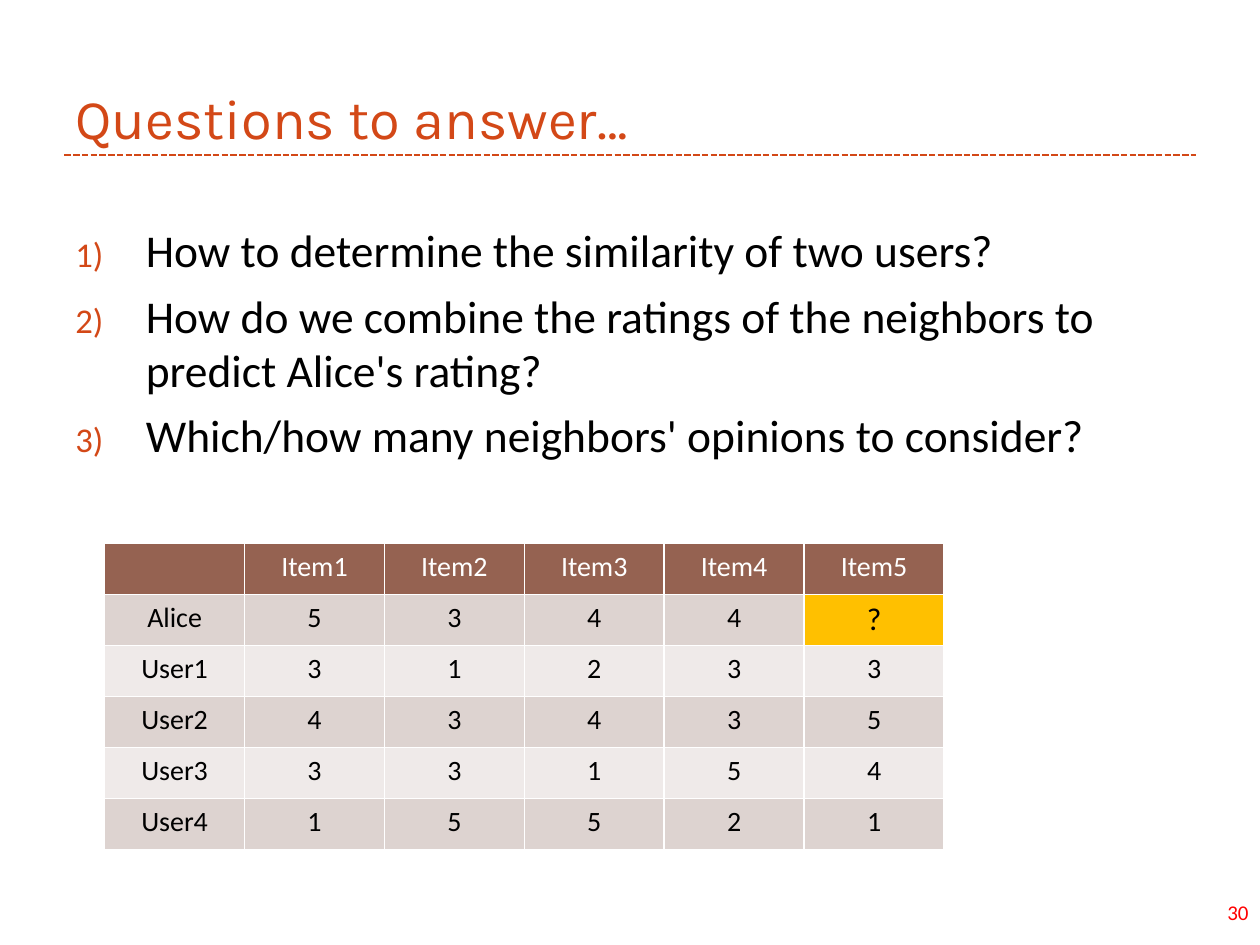
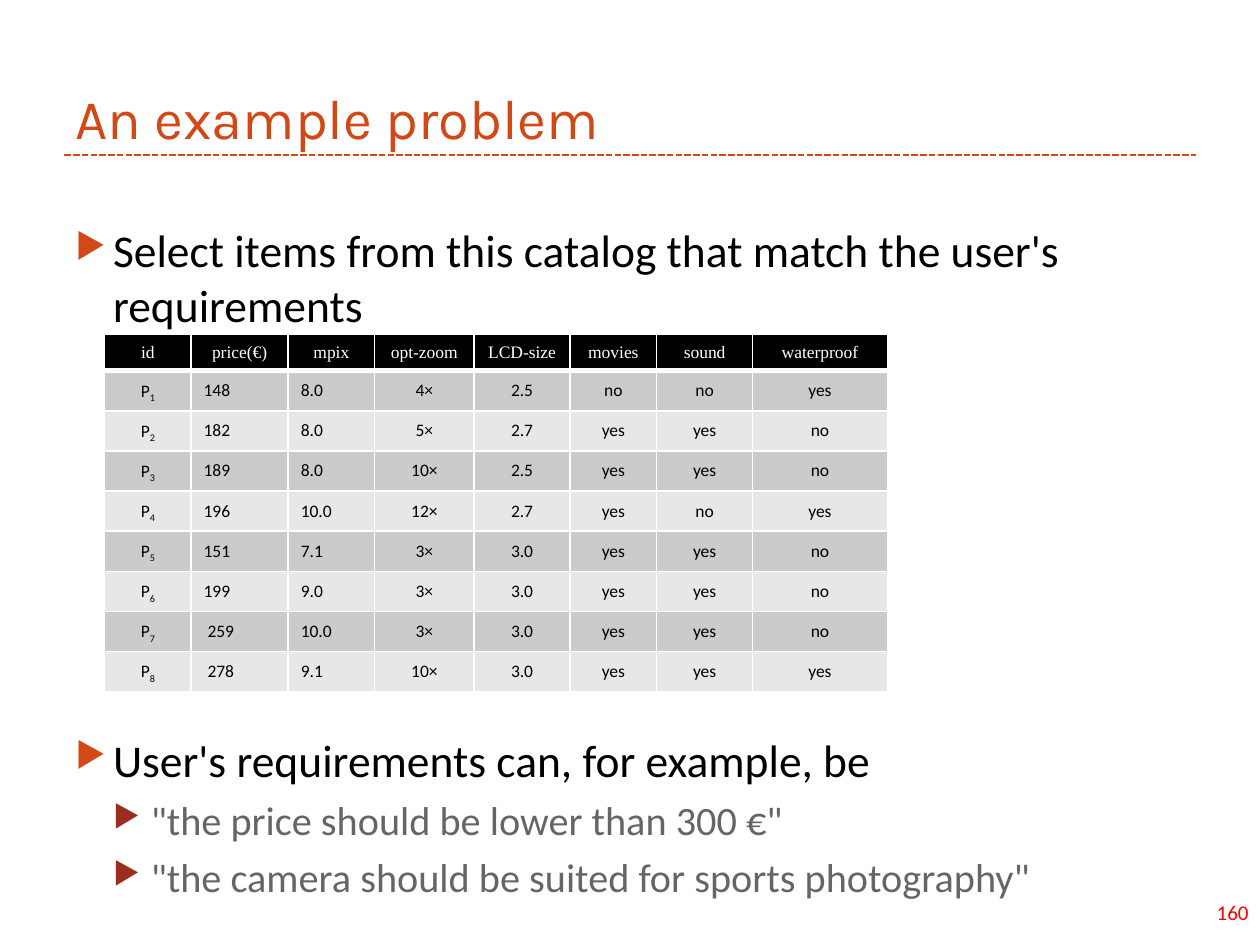
from lxml import etree
from pptx import Presentation
from pptx.dml.color import RGBColor
from pptx.enum.dml import MSO_LINE
from pptx.enum.shapes import MSO_CONNECTOR
from pptx.enum.text import MSO_ANCHOR, PP_ALIGN
from pptx.oxml.ns import qn
from pptx.util import Cm, Pt

LEFT, CENTER, RIGHT = PP_ALIGN.LEFT, PP_ALIGN.CENTER, PP_ALIGN.RIGHT
TOP, BOTTOM = MSO_ANCHOR.TOP, MSO_ANCHOR.BOTTOM
STRAIGHT = MSO_CONNECTOR.STRAIGHT
DASH = MSO_LINE.SQUARE_DOT

ORANGE, DARK_RED, RED, AMBER = "D34817", "9B2D1F", "FF0000", "FFC000"
BLACK, WHITE, GREY = "000000", "FFFFFF", "696464"
MARGIN, CONTENT_WIDTH = 1.27, 22.86
TABLE_LEFT = 2.11


def rgb(value):
    return RGBColor.from_string(value)


def write(paragraph, text, *, size, color=BLACK, font="Calibri", align=LEFT,
          before=None, line_spacing=None, subscript=False):
    """Append a run to the paragraph and format both."""
    paragraph.alignment = align
    if before is not None:
        paragraph.space_before = Pt(before)
    if line_spacing:
        paragraph.line_spacing = line_spacing
    run = paragraph.add_run()
    run.text = text
    run.font.size = Pt(size)
    run.font.name = font
    run.font.color.rgb = rgb(color)
    if subscript:
        run._r.get_or_add_rPr().set("baseline", "-25000")


def add_bullet(paragraph, color, left, hanging, numbered):
    """Give the paragraph a coloured marker and a hanging indent in cm."""
    properties = paragraph._p.get_or_add_pPr()
    properties.set("marL", str(Cm(left)))
    properties.set("indent", str(-Cm(hanging)))
    bullet_color = etree.SubElement(properties, qn("a:buClr"))
    etree.SubElement(bullet_color, qn("a:srgbClr"), val=color)
    etree.SubElement(properties, qn("a:buSzPct"), val="76000")
    if numbered:
        etree.SubElement(properties, qn("a:buAutoNum"), type="arabicParenR")
    else:
        etree.SubElement(properties, qn("a:buChar"), char="▶")


def set_borders(cell, top, bottom):
    """Draw white cell borders; top and bottom are widths in points."""
    properties = cell._tc.get_or_add_tcPr()
    sides = {"a:lnL": 1, "a:lnR": 1, "a:lnT": top, "a:lnB": bottom}
    for position, (side, width) in enumerate(sides.items()):
        border = etree.Element(qn(side), w=str(Pt(width)))
        fill = etree.SubElement(border, qn("a:solidFill"))
        etree.SubElement(fill, qn("a:srgbClr"), val=WHITE)
        properties.insert(position, border)


class Deck:
    def __init__(self):
        self.presentation = Presentation()
        self.presentation.slide_width = Cm(25.4)
        self.presentation.slide_height = Cm(19.05)
        self.slide = None

    def add_slide(self, title, number):
        layout = self.presentation.slide_layouts[6]
        self.slide = self.presentation.slides.add_slide(layout)
        self.rule()
        write(self.text_box(22.17, 18.01, 3.25, 0.76).paragraphs[0],
              number, size=12, color=RED, align=RIGHT)
        heading = self.text_box(MARGIN, 0.43, CONTENT_WIDTH, 2.74, BOTTOM)
        write(heading.paragraphs[0], title, size=32, color=ORANGE, font="Karla")

    def rule(self):
        rule = self.slide.shapes.add_connector(
            STRAIGHT, Cm(1.3), Cm(3.12), Cm(24.1), Cm(3.12))
        rule.line.color.rgb = rgb(ORANGE)
        rule.line.width = Pt(1.25)
        rule.line.dash_style = DASH
        etree.SubElement(rule._element.spPr, qn("a:effectLst"))

    def text_box(self, left, top, width, height, anchor=TOP):
        box = self.slide.shapes.add_textbox(
            Cm(left), Cm(top), Cm(width), Cm(height))
        frame = box.text_frame
        frame.word_wrap = True
        frame.vertical_anchor = anchor
        return frame

    def bullets(self, items, hanging, numbered=False):
        """Fill the body with items of (text, level, space before)."""
        frame = self.text_box(MARGIN, 4.36, CONTENT_WIDTH, 13.5)
        for index, (text, level, before) in enumerate(items):
            paragraph = frame.add_paragraph() if index else frame.paragraphs[0]
            marker = DARK_RED if level else ORANGE
            add_bullet(paragraph, marker, hanging * (level + 1), hanging, numbered)
            write(paragraph, text, size=23 if level else 26,
                  color=GREY if level else BLACK, before=before)

    def table(self, rows, top, widths, heights, fills, size, *, header_rule=1,
              header_font="Calibri", line_spacing=None, left_columns=(),
              subscript_column=None):
        """Add a banded table; fills are header, odd and even row colours."""
        header_fill, *bands = fills
        frame = self.slide.shapes.add_table(
            len(rows), len(widths), Cm(TABLE_LEFT), Cm(top),
            Cm(sum(widths)), Cm(sum(heights)))
        table = frame.table
        table.first_row = table.horz_banding = False
        for column, width in zip(table.columns, widths):
            column.width = Cm(width)
        for r, (values, height) in enumerate(zip(rows, heights)):
            table.rows[r].height = Cm(height)
            for c, value in enumerate(values):
                cell = table.cell(r, c)
                unknown = value == "?"
                fill = bands[(r - 1) % 2] if r else header_fill
                cell.fill.solid()
                cell.fill.fore_color.rgb = rgb(AMBER if unknown else fill)
                set_borders(cell, top=header_rule if r == 1 else 1,
                            bottom=1 if r else header_rule)
                style = {
                    "size": 18 if unknown else size,
                    "color": BLACK if r else WHITE,
                    "font": "Calibri" if r else header_font,
                    "align": LEFT if r and c in left_columns else CENTER,
                    "line_spacing": line_spacing,
                }
                paragraph = cell.text_frame.paragraphs[0]
                if r and c == subscript_column:
                    write(paragraph, value[0], **style)
                    write(paragraph, value[1:], subscript=True, **style)
                elif value:
                    write(paragraph, value, **style)


def add_questions(deck):
    deck.add_slide("Questions to answer…", "30")
    deck.bullets([
        ("How to determine the similarity of two users?", 0, None),
        ("How do we combine the ratings of the neighbors to "
         "predict Alice's rating?", 0, 6),
        ("Which/how many neighbors' opinions to consider?", 0, 6),
    ], hanging=1.42, numbered=True)
    ratings = [
        ("", "Item1", "Item2", "Item3", "Item4", "Item5"),
        ("Alice", "5", "3", "4", "4", "?"),
        ("User1", "3", "1", "2", "3", "3"),
        ("User2", "4", "3", "4", "3", "5"),
        ("User3", "3", "3", "1", "5", "4"),
        ("User4", "1", "5", "5", "2", "1"),
    ]
    deck.table(ratings, 10.95, [2.82] * 6, [1.03] * 6,
               ("956251", "DDD3D0", "EFEAE9"), 16)


def add_example(deck):
    deck.add_slide("An example problem", "160")
    deck.bullets([
        ("Select items from this catalog that match the user's requirements",
         0, None),
        ("User's requirements can, for example, be", 0, 229),
        ('"the price should be lower than 300 €"', 1, 5),
        ('"the camera should be suited for sports photography"', 1, 5),
    ], hanging=0.76)
    cameras = [
        ("id", "price(€)", "mpix", "opt-zoom", "LCD-size", "movies", "sound",
         "waterproof"),
        ("P1", "148", "8.0", "4×", "2.5", "no", "no", "yes"),
        ("P2", "182", "8.0", "5×", "2.7", "yes", "yes", "no"),
        ("P3", "189", "8.0", "10×", "2.5", "yes", "yes", "no"),
        ("P4", "196", "10.0", "12×", "2.7", "yes", "no", "yes"),
        ("P5", "151", "7.1", "3×", "3.0", "yes", "yes", "no"),
        ("P6", "199", "9.0", "3×", "3.0", "yes", "yes", "no"),
        ("P7", " 259", "10.0", "3×", "3.0", "yes", "yes", "no"),
        ("P8", " 278", "9.1", "10×", "3.0", "yes", "yes", "yes"),
    ]
    deck.table(cameras, 6.73, [1.74, 1.96, 1.74, 2.01, 1.93, 1.75, 1.93, 2.72],
               [0.73] + [0.8] * 8, (BLACK, "CBCBCB", "E7E7E7"), 10,
               header_rule=3, header_font="Times New Roman", line_spacing=1.15,
               left_columns=(1, 2), subscript_column=0)


def main():
    deck = Deck()
    add_questions(deck)
    add_example(deck)
    deck.presentation.save("out.pptx")


if __name__ == "__main__":
    main()
